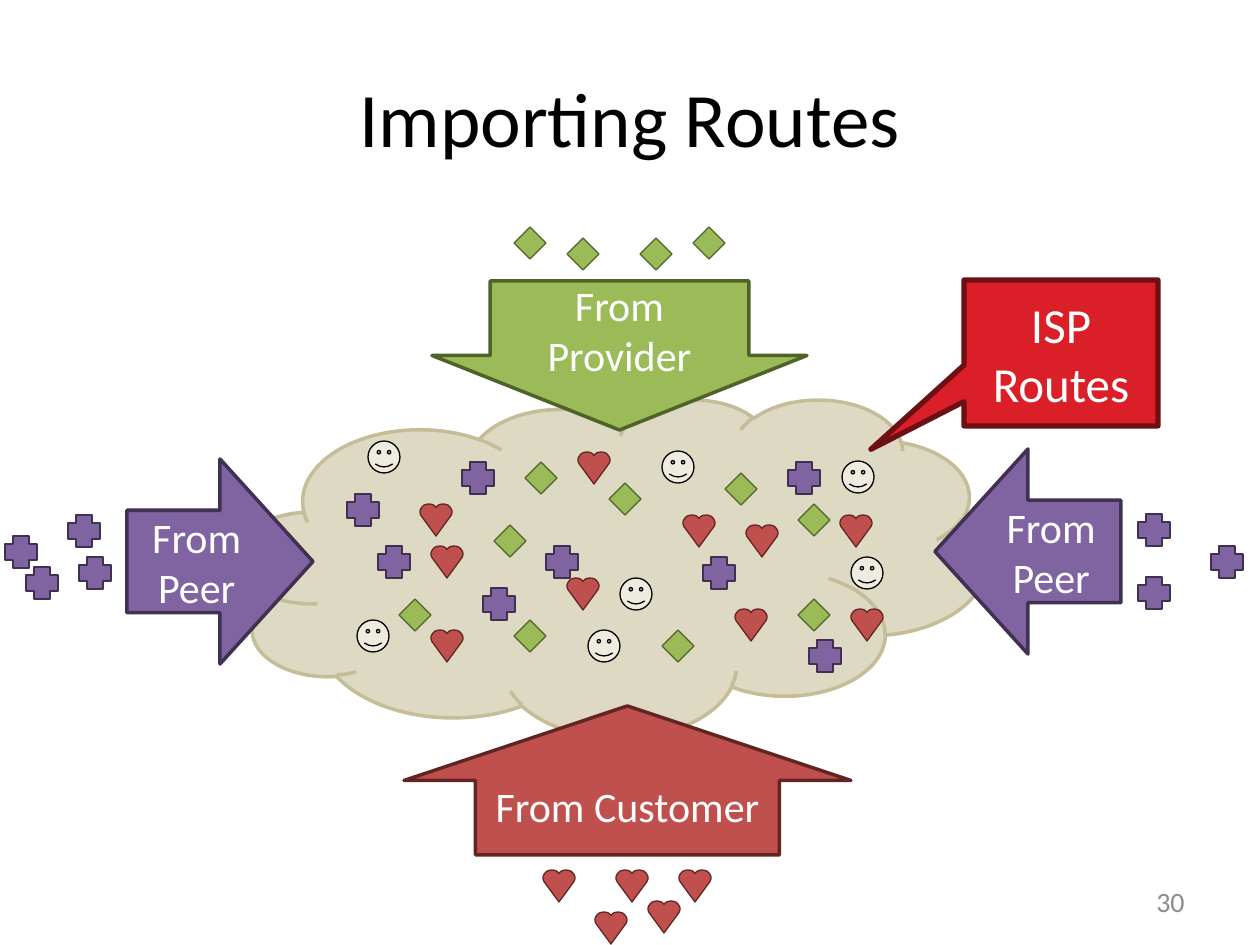
import pptx
import pptx.util
from pptx.dml.color import RGBColor
from pptx.enum.shapes import MSO_SHAPE
from pptx.enum.text import MSO_ANCHOR, PP_ALIGN

PX = 914400 / 126  # EMU in one px
TOKEN = 32         # side of one route marker
FONT = "Calibri"

# Kind of route: preset shape (None for the drawn heart), fill, outline
ROUTES = {
    "provider": (MSO_SHAPE.DIAMOND, "9BBB59", "4F6228"),
    "peer": (MSO_SHAPE.CROSS, "8064A2", "403152"),
    "isp": (MSO_SHAPE.SMILEY_FACE, "EEECE1", "000000"),
    "customer": (None, "C0504D", "632523"),
}

# Left half of a heart in hundredths of its box, from the notch to the tip
HEART_LEFT = [(50, 11), (47, 7), (42, 3), (36, 1), (28, 0), (20, 1), (12, 4),
              (6, 10), (2, 16), (0, 22), (0, 28), (3, 36), (50, 100)]
HEART = HEART_LEFT + [(100 - x, y) for x, y in HEART_LEFT[-2:0:-1]]

# Routes known inside the ISP, relative to the cloud
CLOUD_ROUTES = {
    "provider": [(562, 105), (278, 221), (562, 200), (289, 63), (489, 74),
                 (426, 231), (373, 84), (163, 200), (258, 126)],
    "peer": [(111, 95), (310, 147), (573, 241), (552, 63), (142, 147),
             (247, 189), (467, 158), (226, 63)],
    "isp": [(352, 231), (426, 52), (121, 221), (132, 42), (615, 158),
            (384, 179), (606, 62)],
    "customer": [(615, 210), (499, 210), (195, 231), (195, 147), (184, 105),
                 (331, 179), (447, 116), (342, 53), (604, 116), (510, 126)],
}

# Neighbours: kind, label, arrow, adjustments, box, routes relative to the box
NEIGHBOURS = [
    ("provider", "From Provider", MSO_SHAPE.DOWN_ARROW, (0.69, 0.5),
     (432, 281, 375, 149), [(208, -43), (82, -54), (261, -54), (135, -43)]),
    ("peer", "From Peer", MSO_SHAPE.LEFT_ARROW, (0.5, 0.5),
     (935, 449, 186, 205), [(203, 128), (203, 65), (276, 97)]),
    ("peer", "From Peer", MSO_SHAPE.RIGHT_ARROW, (0.5, 0.5),
     (127, 459, 186, 205), [(-101, 108), (-48, 98), (-122, 77), (-59, 56)]),
    ("customer", "From Customer", MSO_SHAPE.UP_ARROW, (0.68, 0.5),
     (404, 706, 447, 149),
     [(191, 206), (244, 195), (139, 164), (275, 164), (212, 164)]),
]


def emu(px):
    return round(px * PX)


def color(hex_value):
    return RGBColor.from_string(hex_value)


def paint(shape, fill, outline, width):
    shape.shadow.inherit = False
    shape.fill.solid()
    shape.fill.fore_color.rgb = color(fill)
    shape.line.color.rgb = color(outline)
    shape.line.width = pptx.util.Pt(width)


def write(shape, words, size, ink="FFFFFF", align=PP_ALIGN.CENTER):
    frame = shape.text_frame
    frame.text = words
    frame.word_wrap = True
    frame.vertical_anchor = MSO_ANCHOR.MIDDLE
    line = frame.paragraphs[0]
    line.alignment = align
    font = line.runs[0].font
    font.name = FONT
    font.size = pptx.util.Pt(size)
    font.color.rgb = color(ink)


def add_preset(slide, preset, box, fill, outline, width, adjustments=()):
    shape = slide.shapes.add_shape(preset, *map(emu, box))
    for index, value in enumerate(adjustments):
        shape.adjustments[index] = value
    paint(shape, fill, outline, width)
    return shape


def add_label(slide, box, words, size, ink, align):
    label = slide.shapes.add_textbox(*map(emu, box))
    write(label, words, size, ink, align)


def add_routes(slide, box, kind, places):
    preset, fill, outline = ROUTES[kind]
    for dx, dy in places:
        left, top = box[0] + dx, box[1] + dy
        if preset is None:
            builder = slide.shapes.build_freeform(*HEART[0], scale=TOKEN * PX / 100)
            builder.add_line_segments(HEART[1:], close=True)
            heart = builder.convert_to_shape(emu(left), emu(top))
            paint(heart, fill, outline, 0.75)
        else:
            add_preset(slide, preset, (left, top, TOKEN, TOKEN), fill, outline, 0.75)


def add_cloud(slide, box):
    add_preset(slide, MSO_SHAPE.CLOUD, box, "DDD9C3", "C4BD97", 2)
    for kind, places in CLOUD_ROUTES.items():
        add_routes(slide, box, kind, places)


def add_neighbour(slide, box, kind, words, preset, adjustments, places):
    fill, outline = ROUTES[kind][1:]
    add_routes(slide, box, kind, places)
    arrow = add_preset(slide, preset, box, fill, outline, 2, adjustments)
    write(arrow, words, 24)


def add_callout(slide, box):
    callout = add_preset(slide, MSO_SHAPE.RECTANGULAR_CALLOUT, box,
                         "DA1F28", "6D1014", 3, (-0.98, 0.66))
    write(callout, "ISP Routes", 28)


def main():
    deck = pptx.Presentation()
    deck.slide_width = emu(1260)
    deck.slide_height = emu(945)
    slide = deck.slides.add_slide(deck.slide_layouts[6])

    # The ISP and the routes it holds
    add_cloud(slide, (236, 399, 750, 338))

    # Title and slide number
    add_label(slide, (63, 38, 1134, 157), "Importing Routes", 44, "000000",
              PP_ALIGN.CENTER)
    add_label(slide, (903, 876, 294, 50), "30", 16, "8C8C8C", PP_ALIGN.RIGHT)

    # Neighbours that announce routes
    for kind, words, preset, adjustments, box, places in NEIGHBOURS:
        add_neighbour(slide, box, kind, words, preset, adjustments, places)

    # Callout on the cloud
    add_callout(slide, (964, 280, 194, 146))

    deck.save("out.pptx")


if __name__ == "__main__":
    main()
